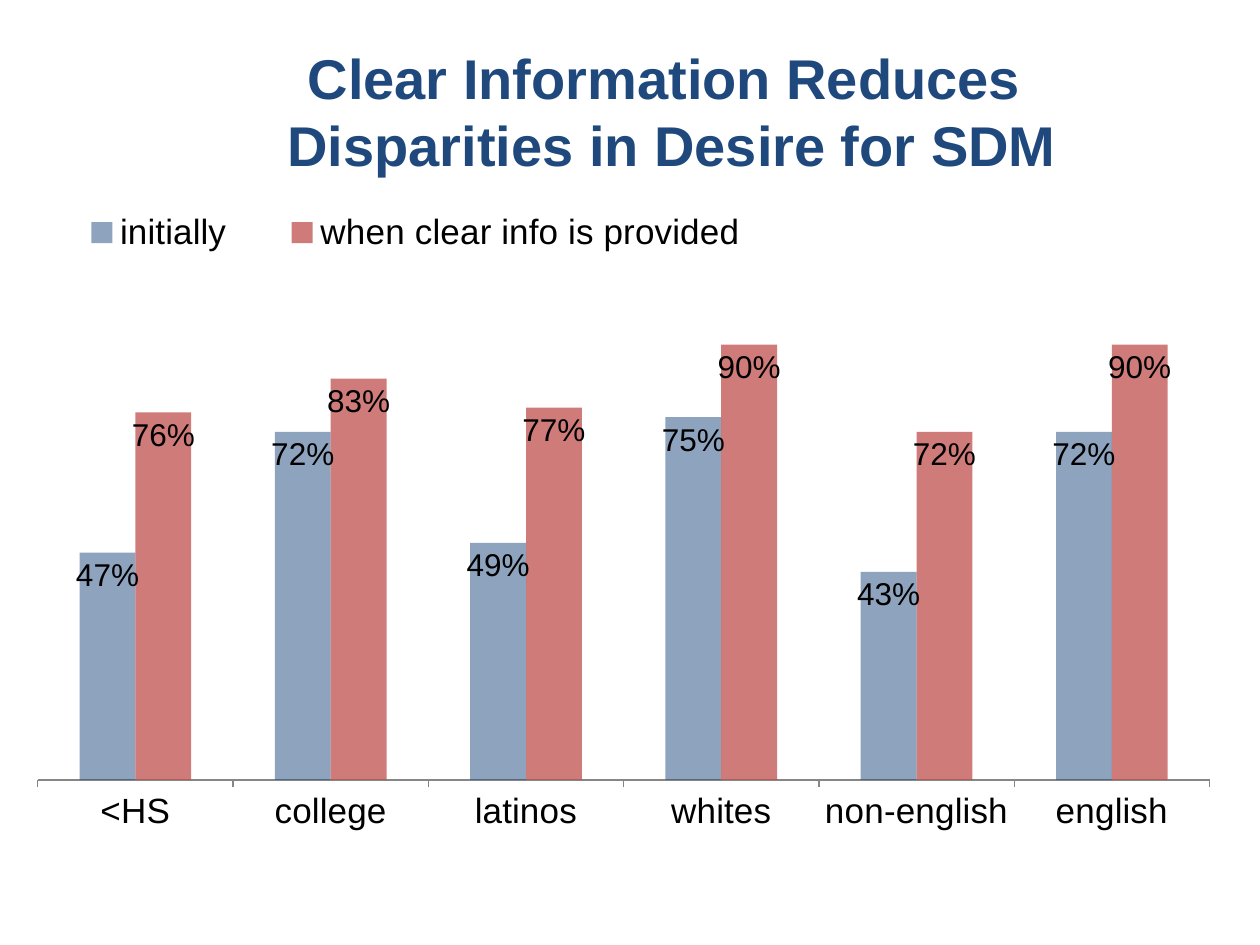
from lxml import etree
from pptx import Presentation
from pptx import util as u
from pptx.chart.data import CategoryChartData
from pptx.dml.color import RGBColor
from pptx.enum import chart as ch, text
from pptx.oxml import parse_xml
from pptx.oxml.ns import nsdecls, qn

NAVY = RGBColor(0x1F, 0x49, 0x7D)
RED = RGBColor(0xC0, 0x50, 0x4D)
GRAY = RGBColor(0x86, 0x86, 0x86)
BLACK = RGBColor(0, 0, 0)
FONT = "Arial"

GROUPS = ["<HS", "college", "latinos", "whites", "non-english", "english"]
DESIRE = [
    ("initially", [0.47, 0.72, 0.49, 0.75, 0.43, 0.72], NAVY, 50),
    ("when clear info is provided", [0.76, 0.83, 0.77, 0.9, 0.72, 0.9], RED, 75),
]


def manual_layout(x, y, w, h, inner=False):
    target = '<c:layoutTarget val="inner"/>' if inner else ""
    sizes = "".join(f'<c:{tag} val="{val}"/>' for tag, val in zip("xywh", (x, y, w, h)))
    return parse_xml(
        f'<c:layout {nsdecls("c")}><c:manualLayout>{target}'
        f'<c:xMode val="edge"/><c:yMode val="edge"/>{sizes}'
        "</c:manualLayout></c:layout>"
    )


class SlideBuilder:
    def __init__(self, prs):
        self.slide = prs.slides.add_slide(prs.slide_layouts[5])

    def style(self, font, size, color=BLACK, bold=False):
        font.name, font.size, font.bold = FONT, u.Pt(size), bold
        font.color.rgb = color

    def title(self, lines, left, top, width, height):
        heading = self.slide.shapes.title
        heading.left, heading.top = u.Inches(left), u.Inches(top)
        heading.width, heading.height = u.Inches(width), u.Inches(height)
        frame = heading.text_frame
        frame.word_wrap = True
        frame.auto_size = text.MSO_AUTO_SIZE.NONE
        frame.vertical_anchor = text.MSO_ANCHOR.MIDDLE
        paragraph = frame.paragraphs[0]
        paragraph.alignment = text.PP_ALIGN.CENTER
        for i, line in enumerate(lines):
            if i:
                paragraph.add_line_break()
            run = paragraph.add_run()
            run.text = line
            self.style(run.font, 32, NAVY, True)

    def column_chart(self, groups, rows, left, top, width, height):
        data = CategoryChartData(number_format="0%")
        data.categories = groups
        for name, values, _, _ in rows:
            data.add_series(name, values)
        chart = self.slide.shapes.add_chart(
            ch.XL_CHART_TYPE.COLUMN_CLUSTERED,
            u.Inches(left), u.Inches(top), u.Inches(width), u.Inches(height), data,
        ).chart
        self.style(chart.font, 18)
        chart.has_title = False
        self.axes(chart)
        self.legend(chart)
        plot = chart.plots[0]
        plot.gap_width, plot.overlap = 150, 0
        plot.vary_by_categories = False
        for series, (_, _, color, opacity) in zip(plot.series, rows):
            self.columns(series, color, opacity)
        area = chart._chartSpace.chart.plotArea
        for old in area.findall(qn("c:layout")):
            area.remove(old)
        area.insert(0, manual_layout(0.03, 0.16, 0.93, 0.72, inner=True))

    def axes(self, chart):
        groups = chart.category_axis
        groups.major_tick_mark = ch.XL_TICK_MARK.OUTSIDE
        groups.format.line.color.rgb = GRAY
        groups.format.line.width = u.Pt(0.75)
        self.style(groups.tick_labels.font, 20)
        share = chart.value_axis
        share.minimum_scale, share.maximum_scale = 0, 1
        share.has_major_gridlines = False
        share.tick_labels.number_format = "0%"
        share.tick_labels.number_format_is_linked = False
        share.visible = False

    def legend(self, chart):
        chart.has_legend = True
        legend = chart.legend
        legend.position = ch.XL_LEGEND_POSITION.RIGHT
        legend.include_in_layout = False
        self.style(legend.font, 20)
        element = legend._element
        for old in element.findall(qn("c:layout")):
            element.remove(old)
        element.find(qn("c:legendPos")).addnext(manual_layout(0.03, 0.02, 0.6, 0.09))

    def columns(self, series, color, opacity):
        fill = series.format.fill
        fill.solid()
        fill.fore_color.rgb = color
        shade = series._element.find(".//" + qn("a:srgbClr"))
        etree.SubElement(shade, qn("a:alpha")).set("val", str(opacity * 1000))
        series.format.line.fill.background()
        series.invert_if_negative = False
        labels = series.data_labels
        labels.show_value = True
        labels.position = ch.XL_LABEL_POSITION.INSIDE_END
        labels.number_format = "0%"
        labels.number_format_is_linked = False
        self.style(labels.font, 18)


def main():
    prs = Presentation()
    prs.slide_width, prs.slide_height = u.Inches(10), u.Inches(7.5)
    builder = SlideBuilder(prs)
    builder.title(
        ["Clear Information Reduces ", "Disparities in Desire for SDM"],
        1.17, 0.42, 8.33, 0.92,
    )
    builder.column_chart(GROUPS, DESIRE, 0, 1.5, 10, 5.33)
    prs.save("out.pptx")


if __name__ == "__main__":
    main()
